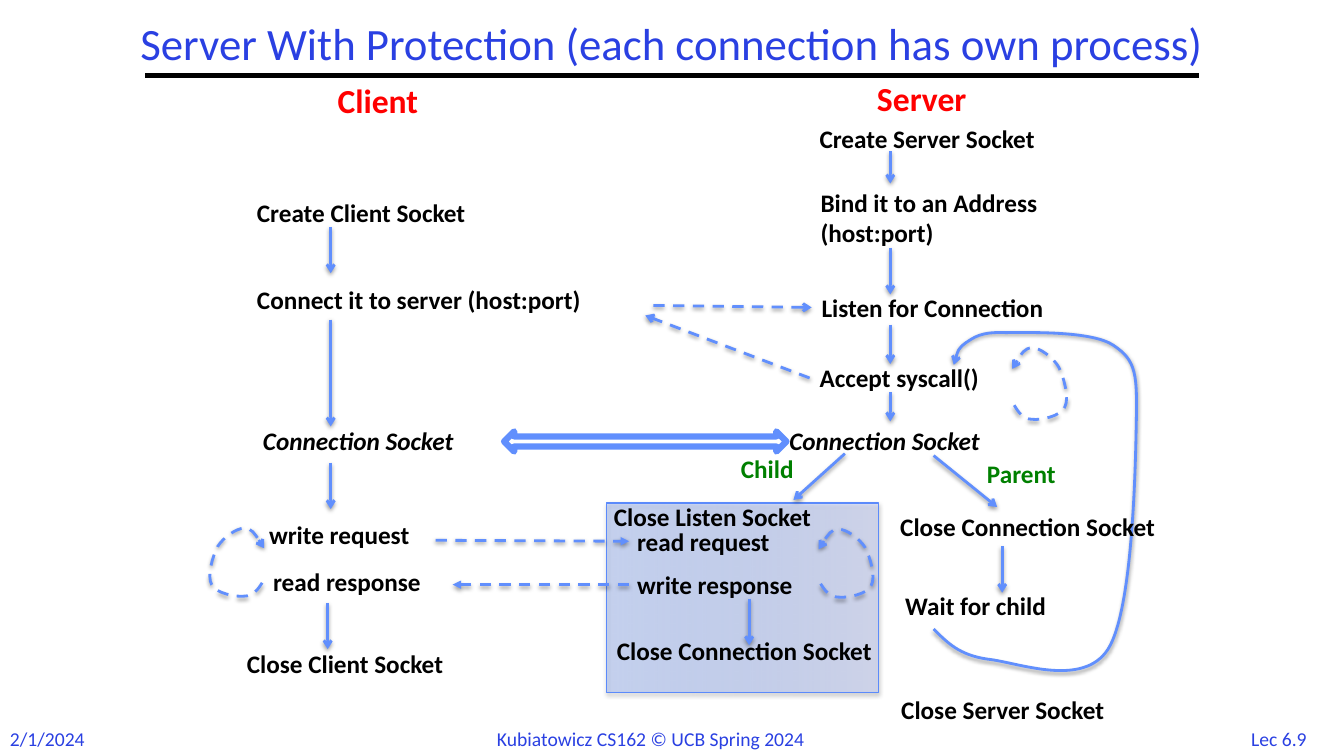
from lxml.etree import SubElement
from pptx import Presentation
from pptx.dml.color import RGBColor
from pptx.enum.dml import MSO_LINE
from pptx.enum.shapes import MSO_CONNECTOR, MSO_SHAPE
from pptx.enum.text import MSO_ANCHOR, MSO_AUTO_SIZE, PP_ALIGN
from pptx.oxml.ns import qn
from pptx.util import Inches, Pt

COLORS = {
    "black": "000000", "white": "FFFFFF", "blue": "2A40E2", "red": "FF0000",
    "green": "008000", "arrow": "618FFD", "box line": "5B8AFB",
    "box start": "5F8EFF", "box end": "C4D0FF",
}
COLORS = {name: RGBColor.from_string(value) for name, value in COLORS.items()}

presentation = Presentation()
presentation.slide_width = Inches(13.33)
presentation.slide_height = Inches(7.5)
slide = presentation.slides.add_slide(presentation.slide_layouts[5])
shapes = slide.shapes


def add_shadow(shape, opacity, distance):
    properties = shape._element.spPr
    for old_effects in properties.findall(qn("a:effectLst")):
        properties.remove(old_effects)
    effects = SubElement(properties, qn("a:effectLst"))
    shadow = SubElement(effects, qn("a:outerShdw"), blurRad=str(Pt(3.1)),
                        dist=str(Pt(distance)), dir="5400000", rotWithShape="0")
    color = SubElement(shadow, qn("a:srgbClr"), val=str(COLORS["black"]))
    SubElement(color, qn("a:alpha"), val=str(opacity * 1000))


def style_arrow(shape, dashed, head="arrow"):
    shape.line.color.rgb = COLORS["arrow"]
    shape.line.width = Pt(2)
    if dashed:
        shape.line.dash_style = MSO_LINE.DASH
    SubElement(shape.line._get_or_add_ln(), qn("a:tailEnd"), type=head)
    add_shadow(shape, 38, 1.6)


# Title and rule
title = shapes.title
title.left, title.top = Inches(0.5), Inches(0.17)
title.width, title.height = Inches(12.33), Inches(0.58)
title.text_frame.text = "Server With Protection (each connection has own process)"
title.text_frame.auto_size = MSO_AUTO_SIZE.NONE
title.text_frame.vertical_anchor = MSO_ANCHOR.MIDDLE
paragraph = title.text_frame.paragraphs[0]
paragraph.alignment = PP_ALIGN.CENTER
paragraph.line_spacing = 0.9
paragraph.font.size = Pt(32)
paragraph.font.name = "Calibri"
paragraph.font.color.rgb = COLORS["blue"]

rule = shapes.add_connector(MSO_CONNECTOR.STRAIGHT, Inches(1.44), Inches(0.75),
                            Inches(11.89), Inches(0.75))
rule.line.color.rgb = COLORS["black"]
rule.line.width = Pt(3)
SubElement(rule._element.spPr, qn("a:effectLst"))

# Child process box
child_box = shapes.add_shape(MSO_SHAPE.RECTANGLE, Inches(6.02), Inches(4.99),
                             Inches(2.69), Inches(1.88))
child_box.fill.gradient()
child_box.fill.gradient_angle = 0
gradient = zip(child_box.fill.gradient_stops, ("box start", "box end"), (0, 1), (26, 46))
for stop, color, position, opacity in gradient:
    stop.color.rgb = COLORS[color]
    stop.position = position
    color_element = stop._gs.find(qn("a:srgbClr"))
    SubElement(color_element, qn("a:alpha"), val=str(opacity * 1000))
child_box.line.color.rgb = COLORS["box line"]
child_box.line.width = Pt(0.75)
add_shadow(child_box, 35, 1.8)

# Two-way link between the connection sockets
link = shapes.add_shape(MSO_SHAPE.LEFT_RIGHT_ARROW, Inches(5), Inches(4.28),
                        Inches(2.8), Inches(0.2))
link.shadow.inherit = False
link.fill.solid()
link.fill.fore_color.rgb = COLORS["white"]
link.line.color.rgb = COLORS["arrow"]
link.line.width = Pt(4.5)

# Straight arrows: start, end, dashed, head
vertical_arrows = [
    (3.28, 2.25, 2.71), (3.28, 3.17, 4.23), (3.28, 4.59, 5.05), (3.25, 5.98, 6.44),
    (8.83, 1.5, 1.82), (8.83, 2.46, 2.92), (8.83, 3.22, 3.61), (8.83, 3.89, 4.18),
    (7.43, 5.94, 6.4), (9.94, 5.42, 5.88),
]
arrows = [((x, top), (x, bottom), False, "arrow") for x, top, bottom in vertical_arrows]
arrows += [
    ((8.38, 4.5), (7.87, 4.96), False, "arrow"),
    ((9.26, 4.52), (9.89, 5.03), False, "arrow"),
    ((6.48, 3.03), (8.05, 3.05), True, "arrow"),
    ((8.03, 3.75), (6.4, 3.13), True, "arrow"),
    ((4.32, 5.36), (6.24, 5.37), True, "triangle"),
    ((6.24, 5.8), (4.49, 5.8), True, "triangle"),
]
for start, end, dashed, head in arrows:
    ends = [Inches(value) for value in start + end]
    arrow = shapes.add_connector(MSO_CONNECTOR.STRAIGHT, *ends)
    style_arrow(arrow, dashed, head)

# Curved arrows: a start point, then three Bezier points per segment
parent_loop = [
    (9.26, 6.24), (9.39, 6.37), (9.51, 6.5), (9.8, 6.54), (10.09, 6.57), (10.74, 6.83),
    (10.99, 6.44), (11.23, 6.06), (11.26, 4.71), (11.27, 4.21), (11.28, 3.71),
    (11.27, 3.58), (11.05, 3.43), (10.84, 3.28), (10.21, 3.3), (9.97, 3.3),
    (9.72, 3.29), (9.66, 3.35), (9.58, 3.4), (9.5, 3.46), (9.48, 3.54), (9.46, 3.62),
]
small_loop = [
    (0.02, 0.57), (0.06, 0.64), (0.11, 0.71), (0.2, 0.71), (0.28, 0.72), (0.48, 0.68),
    (0.52, 0.59), (0.57, 0.5), (0.51, 0.29), (0.46, 0.19), (0.4, 0.09), (0.27, 0),
    (0.2, 0), (0.12, 0), (0.06, 0.11), (0, 0.21),
]
curves = [(parent_loop, False)]
for left, top, direction, stretch in [(10.04, 3.45, 1, 1), (8.12, 5.25, 1, 0.95),
                                      (2.62, 5.24, -1, 0.95)]:
    curves.append(([(left + direction * x, top + stretch * y) for x, y in small_loop], True))

for points, dashed in curves:
    points = [(Inches(x), Inches(y)) for x, y in points]
    builder = shapes.build_freeform(*points[0])
    builder.add_line_segments(points[1:], close=False)
    curve = builder.convert_to_shape()
    outline = curve._element.find(".//" + qn("a:path"))
    segments = outline.findall(qn("a:lnTo"))
    for index in range(0, len(segments), 3):
        bezier = SubElement(outline, qn("a:cubicBezTo"))
        for segment in segments[index:index + 3]:
            bezier.append(segment[0])
            outline.remove(segment)
    curve.fill.background()
    style_arrow(curve, dashed)

# Labels: text, left, top, width, size, color, bold, italic
headings = [("Client", 3.25, 0.74, 1.3), ("Server", 8.6, 0.72, 1.3)]
steps = [
    ("Create Client Socket", 2.45, 1.91, 2.66),
    ("Connect it to server (host:port)", 2.45, 2.77, 3.92),
    ("write request", 2.57, 5.1, 1.77),
    ("read response", 2.61, 5.57, 1.91),
    ("Close Client Socket", 2.35, 6.38, 2.57),
    ("Create Server Socket", 8.03, 1.17, 2.74),
    ("Bind it to an Address\n(host:port)", 8.04, 1.81, 2.8),
    ("Listen for Connection", 8.05, 2.85, 2.8),
    ("Accept syscall()", 8.03, 3.55, 2.13),
    ("Close Listen Socket", 5.99, 4.92, 2.75),
    ("read request", 6.22, 5.17, 1.77),
    ("write response", 6.22, 5.6, 1.99),
    ("Close Connection Socket", 6.02, 6.25, 2.94),
    ("Close Connection Socket", 8.83, 5.02, 2.8),
    ("Wait for child", 8.88, 5.81, 2.75),
    ("Close Server Socket", 8.84, 6.84, 2.7),
]
sockets = [("Connection Socket", 2.51, 4.17, 2.49), ("Connection Socket", 7.73, 4.17, 2.49)]
processes = [("Child", 7.25, 4.45, 0.83), ("Parent", 9.69, 4.5, 0.99)]
footers = [
    ("2/1/2024", 0, 7.16, 1.1),
    ("Kubiatowicz CS162 © UCB Spring 2024", 4.83, 7.16, 3.68),
    ("Lec 6.9", 12.2, 7.16, 0.97),
]
label_groups = [
    (headings, 24, "red", True, False),
    (steps, 18, "black", True, False),
    (sockets, 18, "black", True, True),
    (processes, 18, "green", True, False),
    (footers, 14, "blue", False, False),
]
for labels, size, color, bold, italic in label_groups:
    for text, left, top, width in labels:
        lines = text.count("\n") + 1
        height = 0.1 + lines * size / 60
        label = shapes.add_textbox(Inches(left), Inches(top), Inches(width), Inches(height))
        label.text_frame.word_wrap = True
        label.text_frame.text = text
        for paragraph in label.text_frame.paragraphs:
            paragraph.alignment = PP_ALIGN.CENTER if text == "Lec 6.9" else PP_ALIGN.LEFT
            paragraph.font.size = Pt(size)
            paragraph.font.name = "Calibri"
            paragraph.font.bold = bold
            paragraph.font.italic = italic
            paragraph.font.color.rgb = COLORS[color]

presentation.save("out.pptx")
